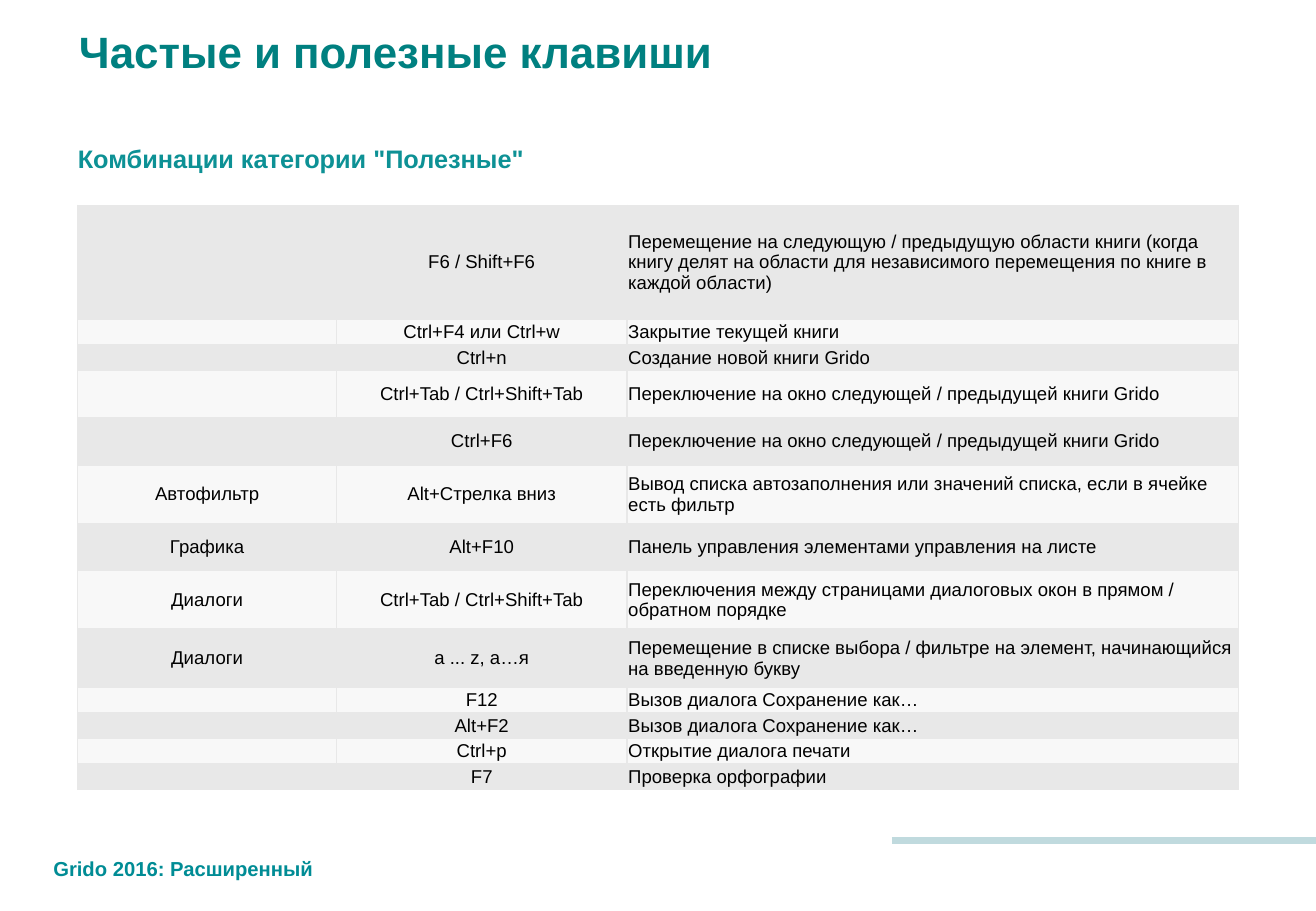
from lxml import etree
from pptx import Presentation
from pptx.dml.color import RGBColor
from pptx.enum import shapes, text
from pptx.oxml import parse_xml
from pptx.oxml.ns import nsdecls, qn
from pptx.util import Inches, Pt

TEAL = RGBColor(0x00, 0x80, 0x80)
SUBTITLE_TEAL = RGBColor(0x0D, 0x91, 0x95)
FOOTER_TEAL = RGBColor(0x00, 0x8C, 0x95)
PALE_BLUE = RGBColor(0xC0, 0xDA, 0xDE)
BLACK = RGBColor(0, 0, 0)
GREY = RGBColor(0xE8, 0xE8, 0xE8)
LIGHT = RGBColor(0xF8, 0xF8, 0xF8)

# Row height, category, keys, action
SHORTCUTS = [
    (0.94, "", "F6 / Shift+F6",
     "Перемещение на следующую / предыдущую области книги (когда книгу делят "
     "на области для независимого перемещения по книге в каждой области)"),
    (0.21, "", "Ctrl+F4 или Ctrl+w", "Закрытие текущей книги"),
    (0.21, "", "Ctrl+n", "Создание новой книги Grido"),
    (0.39, "", "Ctrl+Tab / Ctrl+Shift+Tab",
     "Переключение на окно следующей / предыдущей книги Grido"),
    (0.39, "", "Ctrl+F6",
     "Переключение на окно следующей / предыдущей книги Grido"),
    (0.48, "Автофильтр", "Alt+Стрелка вниз",
     "Вывод списка автозаполнения или значений списка, если в ячейке есть фильтр"),
    (0.39, "Графика", "Alt+F10",
     "Панель управления элементами управления на листе"),
    (0.48, "Диалоги", "Ctrl+Tab / Ctrl+Shift+Tab",
     "Переключения между страницами диалоговых окон в прямом / обратном порядке"),
    (0.48, "Диалоги", "a ... z, а…я",
     "Перемещение в списке выбора / фильтре на элемент, начинающийся на введенную букву"),
    (0.21, "", "F12", "Вызов диалога Сохранение как…"),
    (0.21, "", "Alt+F2", "Вызов диалога Сохранение как…"),
    (0.21, "", "Ctrl+p", "Открытие диалога печати"),
    (0.21, "", "F7", "Проверка орфографии"),
]
COL_WIDTHS = [2.13, 2.39, 5.03]


def set_font(p, size, color, bold=False):
    p.font.name = "Arial"
    p.font.size = Pt(size)
    p.font.bold = bold
    p.font.color.rgb = color


prs = Presentation()
prs.slide_width = Inches(10.83)
prs.slide_height = Inches(7.5)
s = prs.slides.add_slide(prs.slide_layouts[6])

# Accent line
line = s.shapes.add_connector(shapes.MSO_CONNECTOR.STRAIGHT, Inches(7.34),
                              Inches(6.92), Inches(10.83), Inches(6.92))
line.line.color.rgb = PALE_BLUE
line.line.width = Pt(3.75)
etree.SubElement(line._element.spPr, qn("a:effectLst"))

# Title, subtitle and footer
for x, y, w, h, inset, size, color, words in [
    (0.65, 0.2, 9.55, 0.54, 0, 26, TEAL, "Частые и полезные клавиши"),
    (0.64, 1.18, 9.55, 0.39, 0, 15, SUBTITLE_TEAL, 'Комбинации категории "Полезные"'),
    (0.34, 7, 6.49, 0.34, 0.1, 12, FOOTER_TEAL, "Grido 2016: Расширенный"),
]:
    tf = s.shapes.add_textbox(Inches(x), Inches(y), Inches(w), Inches(h)).text_frame
    tf.word_wrap = True
    tf.margin_left = Inches(inset)
    tf.margin_top = tf.margin_bottom = Inches(inset / 2)
    p = tf.paragraphs[0]
    p.text = words
    set_font(p, size, color, bold=True)

# Shortcut table
table = s.shapes.add_table(len(SHORTCUTS), len(COL_WIDTHS), Inches(0.64), Inches(1.69),
                           Inches(9.55), Inches(4.8)).table
table.first_row = table.horz_banding = False
for column, width in zip(table.columns, COL_WIDTHS):
    column.width = Inches(width)

for i, (height, *words) in enumerate(SHORTCUTS):
    table.rows[i].height = Inches(height)
    for j, word in enumerate(words):
        cell = table.cell(i, j)
        cell.margin_left = cell.margin_right = Inches(0.01)
        cell.margin_top = cell.margin_bottom = Inches(0.01)
        cell.vertical_anchor = text.MSO_ANCHOR.MIDDLE
        p = cell.text_frame.paragraphs[0]
        if word:
            p.text = word
        else:
            # Keeps an empty cell from stretching its row
            etree.SubElement(p._p, qn("a:endParaRPr"), sz="1100")
        p.alignment = text.PP_ALIGN.LEFT if j == 2 else text.PP_ALIGN.CENTER
        set_font(p, 11, BLACK)
        # Borders come before the fill
        for side in "LRTB":
            cell._tc.get_or_add_tcPr().append(parse_xml(
                f'<a:ln{side} {nsdecls("a")} w="{Pt(0.75)}"><a:solidFill>'
                f'<a:srgbClr val="{GREY}"/></a:solidFill></a:ln{side}>'))
        cell.fill.solid()
        cell.fill.fore_color.rgb = LIGHT if i % 2 else GREY

prs.save("out.pptx")
